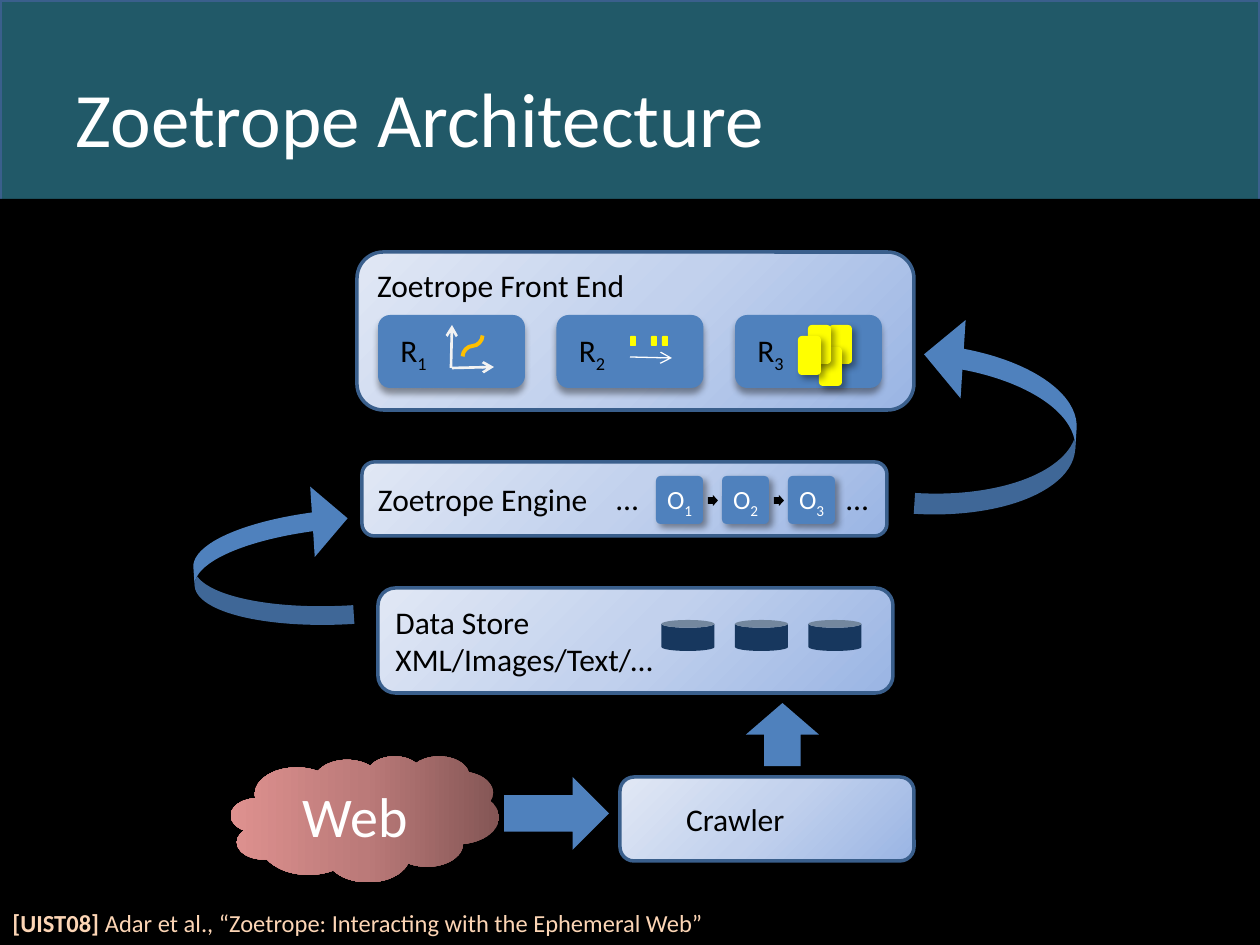
from copy import deepcopy

from lxml.etree import SubElement
from pptx import Presentation
from pptx.dml.color import RGBColor
from pptx.enum.shapes import MSO_CONNECTOR as Link, MSO_SHAPE as Shape
from pptx.enum.text import MSO_ANCHOR as Anchor, MSO_AUTO_SIZE as Fit, PP_ALIGN as Align
from pptx.oxml.ns import qn
from pptx.util import Emu, Pt

BLUE, EDGE, BLACK, WHITE, YELLOW = "4F81BD", "3A5F8C", "000000", "FFFFFF", "FFFF00"
PANEL_STOPS = ("9AB5E4", "C2D1ED", "E1E8F5")
CLOUD_STOPS = ("845655", "BB7A79", "DE918F")


def px(length):
    return Emu(round(length * 914400 / 126))


def color(value):
    return RGBColor.from_string(value)


class Canvas:
    font = "Calibri"

    def __init__(self, page):
        self.page = page
        self.layer = page.shapes

    def group(self):
        self.layer = self.page.shapes.add_group_shape().shapes

    def ungroup(self):
        self.layer = self.page.shapes

    def add_text(self, shape, paras, size, tint, align=Align.LEFT, anchor=Anchor.MIDDLE):
        frame = shape.text_frame
        frame.vertical_anchor = anchor
        for index, spans in enumerate(paras):
            para = frame.add_paragraph() if index else frame.paragraphs[0]
            para.alignment = align
            for text, kind in spans:
                span = para.add_run()
                span.text = text
                span.font.name, span.font.size = self.font, Pt(size)
                span.font.color.rgb = color(tint)
                if kind == "bold":
                    span.font.bold = True
                if kind == "sub":
                    span.font._element.set("baseline", "-25000")

    def title(self, text, *place):
        box = self.page.shapes.title
        box.left, box.top, box.width, box.height = map(px, place)
        self.add_text(box, [[(text, "")]], 44, WHITE)
        self.page.shapes._spTree.append(box._element)

    def shape(self, kind, place, fill, edge=None, adjust=(), turn=0, shadow=None):
        item = self.layer.add_shape(kind, *map(px, place))
        item.shadow.inherit = False
        item.rotation = turn
        for index, value in enumerate(adjust):
            item.adjustments[index] = value
        item.fill.solid()
        item.fill.fore_color.rgb = color(fill)
        if edge:
            item.line.color.rgb = color(edge)
            item.line.width = Pt(2)
        else:
            item.line.fill.background()
        if shadow is not None:
            effects = item._element.spPr.find(qn("a:effectLst"))
            outer = SubElement(effects, qn("a:outerShdw"), blurRad=str(Pt(4)), dist=str(Pt(3)),
                               dir=str(shadow * 60000), algn="ctr", rotWithShape="0")
            tone = SubElement(outer, qn("a:srgbClr"), val=BLACK)
            SubElement(tone, qn("a:alpha"), val="40000")
        return item

    def gradient(self, item, stops, angle):
        item.fill.gradient()
        stop_list = item._element.spPr.find(".//" + qn("a:gsLst"))
        stop_list.append(deepcopy(stop_list[0]))
        for index, stop in enumerate(item.fill.gradient_stops):
            stop.color.rgb = color(stops[index])
            stop.position = index / 2
        item.fill.gradient_angle = angle

    def panel(self, place, lines, anchor=Anchor.MIDDLE, indent=0):
        item = self.shape(Shape.ROUNDED_RECTANGLE, place, BLUE, EDGE)
        self.gradient(item, PANEL_STOPS, 135)
        self.add_text(item, [[(line, "")] for line in lines], 18, BLACK, anchor=anchor)
        if indent:
            item.text_frame.margin_left = px(indent)

    def label(self, place, spans, size=18, tint=BLACK, wrap=True):
        box = self.layer.add_textbox(*map(px, place))
        box.text_frame.word_wrap = wrap
        box.text_frame.auto_size = Fit.SHAPE_TO_FIT_TEXT
        self.add_text(box, [spans], size, tint, anchor=Anchor.TOP)

    def badge(self, place, spans):
        box = self.layer.add_textbox(*map(px, place))
        frame = box.text_frame
        frame.word_wrap = True
        frame.margin_left = frame.margin_right = frame.margin_top = frame.margin_bottom = px(8)
        self.add_text(box, [spans], 15, WHITE, Align.CENTER)
        frame.paragraphs[0].line_spacing = 0.9

    def link(self, ends, tint, width, kind=Link.STRAIGHT, arrow=True, turn=0):
        item = self.layer.add_connector(kind, *map(px, ends))
        item.line.color.rgb = color(tint)
        item.line.width = Pt(width)
        props = item._element.spPr
        if arrow:
            SubElement(props.find(qn("a:ln")), qn("a:tailEnd"), type="arrow")
        SubElement(props, qn("a:effectLst"))
        if turn:
            props.find(qn("a:xfrm")).set("rot", str(turn * 60000))


def draw_crawler(canvas):
    canvas.group()
    canvas.panel((620, 777, 294, 84), ["Crawler"], indent=62)
    canvas.ungroup()
    cloud = canvas.shape(Shape.CLOUD, (231, 756, 268, 126), CLOUD_STOPS[1])
    canvas.gradient(cloud, CLOUD_STOPS, 180)
    canvas.add_text(cloud, [[("Web", "")]], 32, WHITE, Align.CENTER, Anchor.TOP)


def draw_store(canvas):
    canvas.group()
    canvas.panel((378, 588, 515, 105), ["Data Store", "XML/Images/Text/…"])
    for index in range(3):
        canvas.shape(Shape.CAN, (661.5 + 73.5 * index, 620, 53, 31), "17375E")


def draw_engine(canvas):
    canvas.group()
    canvas.panel((362, 462, 525, 74), ["Zoetrope Engine"])
    canvas.label((604, 473, 189, 50), [("…", "")])
    canvas.label((834, 473, 73, 50), [("…", "")])
    for index in range(3):
        left = 656 + 66 * index
        place = (left, 476, 47, 48)
        canvas.shape(Shape.ROUNDED_RECTANGLE, place, BLUE, adjust=[0.1], shadow=45)
        canvas.badge(place, [("O", ""), (str(index + 1), "sub")])
        if index < 2:
            canvas.shape(Shape.RIGHT_ARROW, (left + 52, 495, 10, 11), BLACK, adjust=[0.6, 0.5])


def draw_front_end(canvas):
    canvas.group()
    canvas.panel((357, 252, 557, 158), ["Zoetrope Front End"], Anchor.TOP)
    for index in range(3):
        left = 378 + 178.5 * index
        canvas.shape(Shape.ROUNDED_RECTANGLE, (left, 315, 147, 73), BLUE, shadow=90)
        canvas.label((left + 10, 325, 53, 50), [("R", ""), (str(index + 1), "sub")], wrap=False)
    canvas.link((451, 368, 452, 325), "F2F2F2", 1.5)
    canvas.link((452, 368, 494, 367), "F2F2F2", 1.5)
    canvas.link((483, 356, 462, 336), "FFC000", 2.25, Link.CURVE, arrow=False, turn=90)
    canvas.link((630, 357, 672, 358), WHITE, 0.75)
    for left in (630, 651, 662):
        canvas.shape(Shape.ROUNDED_RECTANGLE, (left, 336, 6, 10), YELLOW)
    for left, top in ((829, 325), (819, 347), (808, 325), (798, 336)):
        canvas.shape(Shape.ROUNDED_RECTANGLE, (left, top, 23, 39), YELLOW, shadow=45)


def draw_flow(canvas):
    canvas.ungroup()
    bend = (0.133, 0.5, 0.25)
    canvas.shape(Shape.CURVED_RIGHT_ARROW, (920, 320, 157, 199), BLUE, adjust=bend, turn=183.7)
    mirrored = canvas.shape(Shape.CURVED_RIGHT_ARROW, (193, 488, 157, 141), BLUE,
                            adjust=bend, turn=176.3)
    mirrored._element.spPr.find(qn("a:xfrm")).set("flipH", "1")
    canvas.shape(Shape.RIGHT_ARROW, (504, 777, 105, 73), BLUE)
    canvas.shape(Shape.RIGHT_ARROW, (751, 698, 63, 73), BLUE, turn=270)


def main():
    deck = Presentation()
    deck.slide_width, deck.slide_height = px(1260), px(945)
    canvas = Canvas(deck.slides.add_slide(deck.slide_layouts[5]))
    canvas.shape(Shape.RECTANGLE, (0, 0, 1260, 945), "215968", EDGE)
    canvas.shape(Shape.RECTANGLE, (0, 199, 1260, 746), BLACK)
    canvas.title("Zoetrope Architecture", 63, 38, 1134, 158)
    draw_crawler(canvas)
    draw_store(canvas)
    draw_engine(canvas)
    draw_front_end(canvas)
    draw_flow(canvas)
    canvas.label((0, 902, 998, 43), [
        ("[UIST08] ", "bold"),
        ("Adar et al., “Zoetrope: Interacting with the Ephemeral Web”", ""),
    ], 14, "FCD5B5")
    deck.save("out.pptx")


if __name__ == "__main__":
    main()
